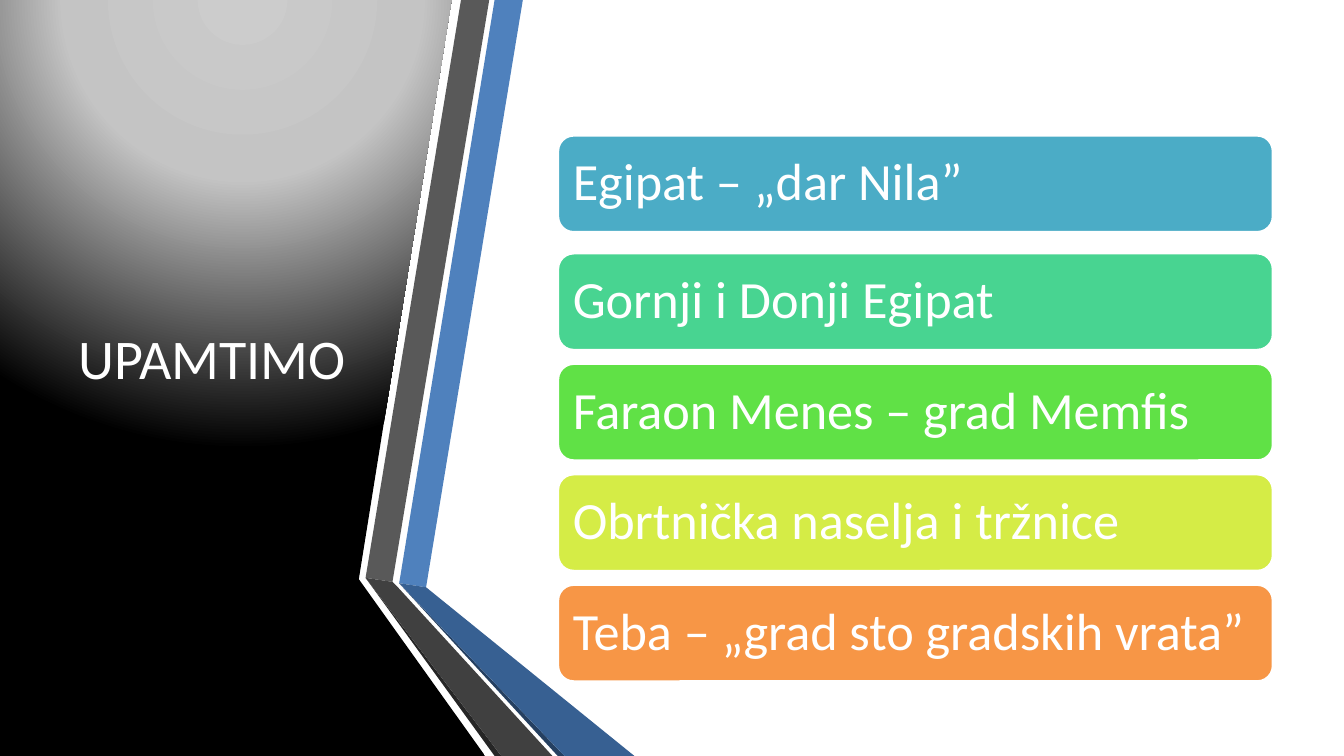
from pptx import Presentation
from pptx.dml.color import RGBColor
from pptx.enum.shapes import MSO_SHAPE
from pptx.enum.text import MSO_ANCHOR, PP_ALIGN
from pptx.oxml import parse_xml
from pptx.oxml.ns import nsdecls, qn
from pptx.util import Inches, Pt

# Corners on a grid of 100 columns by 56.25 rows
BOTTOM = 56.25
GREY_BEND_LEFT, GREY_BEND_RIGHT = (27.2, 43), (29.2, 43.3)
BLUE_BEND_LEFT, BLUE_BEND_RIGHT = (29.7, 43.4), (31.7, 43.7)

PANEL = [(0, 0), (33.6, 0), (26.7, 43.1), (36.1, BOTTOM), (0, BOTTOM)]
PANEL_STOPS = [(0, "CCCCCC"), (40, "C4C4C4"), (100, "000000")]
RIBBONS = [
    ("4F81BD", [BLUE_BEND_LEFT, BLUE_BEND_RIGHT, (38.9, 0), (36.8, 0)]),
    ("595959", [GREY_BEND_LEFT, GREY_BEND_RIGHT, (36.4, 0), (34.3, 0)]),
    ("262626", [GREY_BEND_LEFT, (36.8, BOTTOM), (37.3, BOTTOM)]),
    ("254061", [BLUE_BEND_LEFT, (41.5, BOTTOM), (42, BOTTOM)]),
    ("376092", [BLUE_BEND_LEFT, (42, BOTTOM), (47.2, BOTTOM), BLUE_BEND_RIGHT]),
    ("404040", [GREY_BEND_LEFT, (37.3, BOTTOM), (41.1, BOTTOM),
                (29.6, 43.7), GREY_BEND_RIGHT]),
]

FACTS = [
    ("Egipat – „dar Nila”", "4BACC6"),
    ("Gornji i Donji Egipat", "48D491"),
    ("Faraon Menes – grad Memfis", "60E146"),
    ("Obrtnička naselja i tržnice", "D5EC46"),
    ("Teba – „grad sto gradskih vrata”", "F79646"),
]
FIRST_BAR_TOP, BAR_STEP, FIRST_BAR_LIFT = 10.58, 8.22, 0.55


def color(hex_string):
    return RGBColor.from_string(hex_string)


def write(shape, text, size=28, font="Calibri", fill="FFFFFF",
          align=PP_ALIGN.LEFT, line_spacing=1.0, margins=(0.1, 0.05)):
    frame = shape.text_frame
    frame.word_wrap = True
    frame.vertical_anchor = MSO_ANCHOR.MIDDLE
    frame.margin_left = frame.margin_right = Inches(margins[0])
    frame.margin_top = frame.margin_bottom = Inches(margins[1])
    frame.text = text
    paragraph = frame.paragraphs[0]
    paragraph.alignment = align
    paragraph.line_spacing = line_spacing
    paragraph.font.size = Pt(size)
    paragraph.font.name = font
    paragraph.font.color.rgb = color(fill)


class SlideBuilder:
    """Holds the style and the slide; lengths are grid columns and rows."""
    white = "FFFFFF"

    def __init__(self, presentation):
        self.column = presentation.slide_width / 100
        self.row = presentation.slide_height / BOTTOM
        self.slide = presentation.slides.add_slide(presentation.slide_layouts[5])
        background = self.slide.background.fill
        background.solid()
        background.fore_color.rgb = color(self.white)

    def place(self, columns, rows):
        return round(columns * self.column), round(rows * self.row)

    def polygon(self, points, fill):
        start, *others = [self.place(*point) for point in points]
        builder = self.slide.shapes.build_freeform(*start)
        builder.add_line_segments(others, close=True)
        shape = builder.convert_to_shape()
        shape.shadow.inherit = False
        shape.fill.solid()
        shape.fill.fore_color.rgb = color(fill)
        shape.line.fill.background()
        return shape

    def glowing_panel(self, points, stops):
        """Polygon with a circular gradient centred above its top edge."""
        properties = self.polygon(points, stops[-1][1]).element.spPr
        stop_list = "".join(
            f'<a:gs pos="{position * 1000}"><a:srgbClr val="{fill}"/></a:gs>'
            for position, fill in stops)
        gradient = parse_xml(
            f'<a:gradFill {nsdecls("a")} rotWithShape="1">'
            f'<a:gsLst>{stop_list}</a:gsLst><a:path path="circle">'
            '<a:fillToRect l="50000" t="-80000" r="50000" b="180000"/>'
            '</a:path></a:gradFill>')
        properties.replace(properties.find(qn("a:solidFill")), gradient)

    def title(self, text, left, top, width, height):
        title = self.slide.shapes.title
        title.left, title.top = self.place(left, top)
        title.width, title.height = self.place(width, height)
        write(title, text, size=30, align=PP_ALIGN.CENTER)
        title.element.getparent().append(title.element)  # in front of the panel

    def bar(self, text, fill, left, top, width, height):
        shape = self.slide.shapes.add_shape(
            MSO_SHAPE.ROUNDED_RECTANGLE,
            *self.place(left, top), *self.place(width, height))
        shape.shadow.inherit = False
        shape.fill.solid()
        shape.fill.fore_color.rgb = color(fill)
        shape.line.color.rgb = color(self.white)
        shape.line.width = Pt(2)
        write(shape, text, line_spacing=0.9, margins=(0.08, 0.08))


def main():
    presentation = Presentation()
    presentation.slide_width = Inches(10)
    presentation.slide_height = presentation.slide_width * 9 // 16
    builder = SlideBuilder(presentation)
    builder.glowing_panel(PANEL, PANEL_STOPS)
    for fill, points in RIBBONS:
        builder.polygon(points, fill)
    builder.title("UPAMTIMO", 4.4, 5.6, 22.8, 41.9)
    for index, (text, fill) in enumerate(FACTS):
        lift = 0 if index else FIRST_BAR_LIFT
        builder.bar(text, fill, 41.47, FIRST_BAR_TOP + index * BAR_STEP - lift, 53.3, 7.3)
    presentation.save("out.pptx")


if __name__ == "__main__":
    main()
